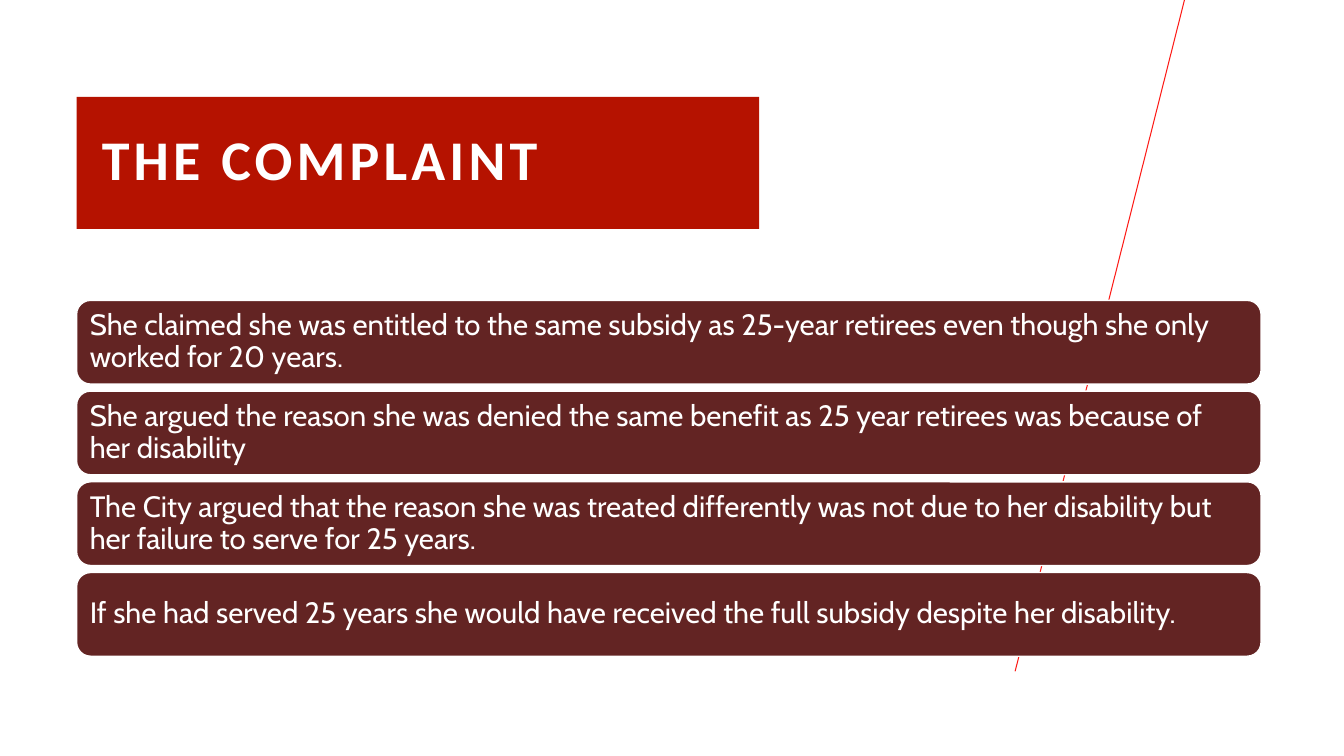
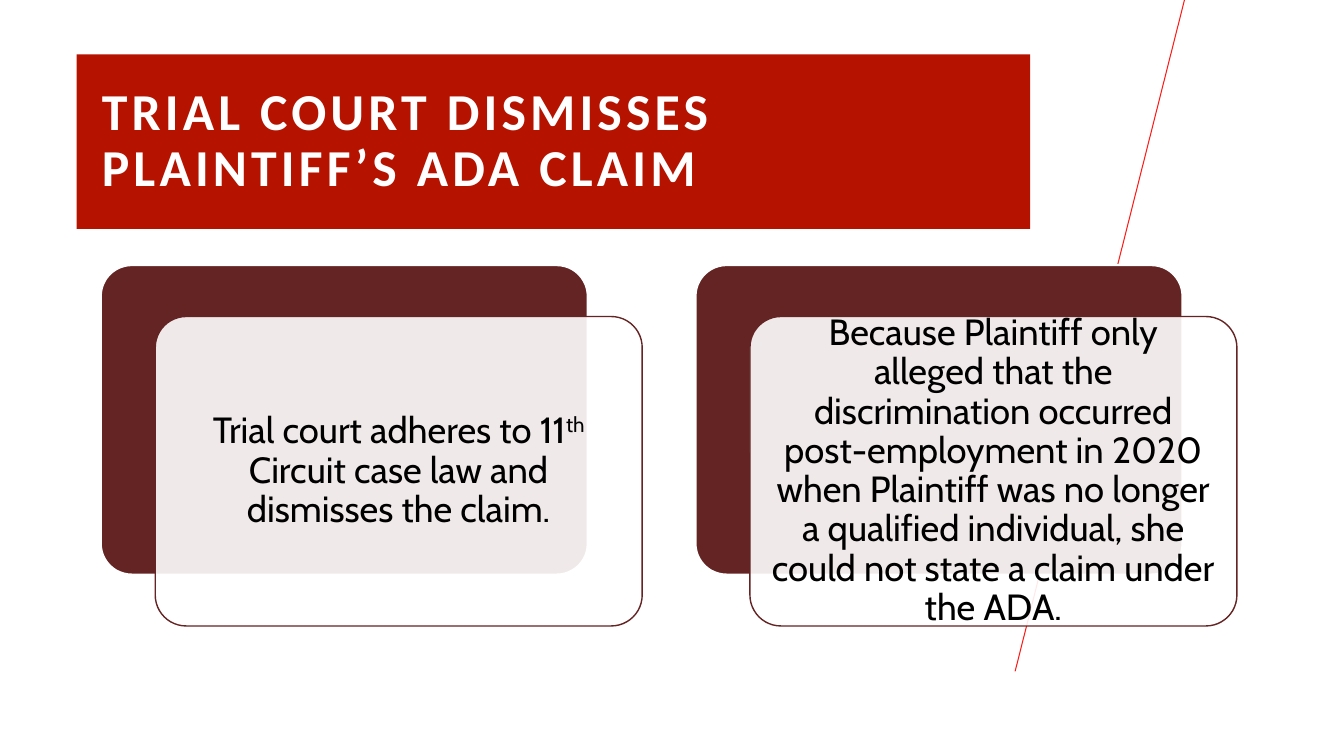
from dataclasses import dataclass

from lxml.etree import SubElement
from pptx import Presentation
from pptx.dml.color import RGBColor
from pptx.enum.shapes import MSO_CONNECTOR as Connector, MSO_SHAPE as Shape
from pptx.enum.text import MSO_ANCHOR as Anchor, MSO_AUTO_SIZE as AutoSize, PP_ALIGN as Align
from pptx.oxml.ns import qn
from pptx.util import Inches, Pt


@dataclass(frozen=True)
class Theme:
    red: str = "B51200"
    maroon: str = "632423"
    accent: str = "FD1B17"
    white: str = "FFFFFF"
    black: str = "000000"
    title_font: str = "Calibri"
    body_font: str = "Cabin"
    bar_size: int = 21
    card_size: int = 26
    line_spacing: float = 0.9


THEME = Theme()
SLIDE_WIDTH, SLIDE_HEIGHT = Inches(13.33), Inches(7.5)
LEFT_MARGIN = 5.7
TITLE_BOTTOM = 30.27

COMPLAINT_POINTS = (
    "She claimed she was entitled to the same subsidy as 25-year retirees even though she only worked for 20 years.",
    "She argued the reason she was denied the same benefit as 25 year retirees was because of her disability",
    "The City argued that the reason she was treated differently was not due to her disability but "
    "her failure to serve for 25 years.",
    "If she had served 25 years she would have received the full subsidy despite her disability.",
)
RULING_POINTS = (
    ("Trial court adheres to 11", "th", " Circuit case law and dismisses the claim."),
    ("Because Plaintiff only alleged that the discrimination occurred post-employment in 2020 when "
     "Plaintiff was no longer a qualified individual, she could not state a claim under the ADA.",),
)


def across(percent):
    """Turn a percentage of the slide width into a length."""
    return round(SLIDE_WIDTH * percent / 100)


def down(percent):
    """Turn a percentage of the slide height into a length."""
    return round(SLIDE_HEIGHT * percent / 100)


def color(value):
    return RGBColor.from_string(value)


def write_text(frame, pieces, *, size, ink, font=THEME.body_font, bold=False,
               tracking=0, align=Align.LEFT, insets=(0.1, 0.05, 0.1, 0.05)):
    """Write one paragraph; every second piece is superscript."""
    frame.word_wrap = True
    frame.auto_size = AutoSize.NONE
    frame.vertical_anchor = Anchor.MIDDLE
    (frame.margin_left, frame.margin_top,
     frame.margin_right, frame.margin_bottom) = map(Inches, insets)
    paragraph = frame.paragraphs[0]
    paragraph.alignment = align
    paragraph.line_spacing = THEME.line_spacing
    for index, piece in enumerate(pieces):
        run = paragraph.add_run()
        run.text = piece
        run.font.size = Pt(size)
        run.font.name = font
        run.font.bold = bold
        run.font.color.rgb = color(ink)
        properties = run.font._element
        if tracking:
            properties.set("spc", str(tracking * 100))
        if index % 2:
            properties.set("baseline", "30000")


def add_panel(slide, left, top, width, height, *, fill, outline, weight=1, opacity=None, corner=None):
    """Add a rounded rectangle placed in percentages of the slide."""
    panel = slide.shapes.add_shape(
        Shape.ROUNDED_RECTANGLE, across(left), down(top), across(width), down(height))
    panel.shadow.inherit = False
    panel.fill.solid()
    panel.fill.fore_color.rgb = color(fill)
    panel.line.color.rgb = color(outline)
    panel.line.width = Pt(weight)
    if corner is not None:
        panel.adjustments[0] = corner
    if opacity is not None:
        fill_color = panel.element.spPr.find(qn("a:solidFill"))[0]
        SubElement(fill_color, qn("a:alpha")).set("val", str(opacity * 1000))
    return panel


def add_slanted_rule(layout, slide):
    """Draw the rule on a slide, then move it to the layout that all slides share."""
    rule = slide.shapes.add_connector(
        Connector.STRAIGHT, across(88.13), 0, across(75.53), down(88.8))
    rule.line.color.rgb = color(THEME.accent)
    rule.line.width = Pt(0.75)
    SubElement(rule.element.spPr, qn("a:effectLst"))
    layout.shapes.element.append(rule.element)


def add_titled_slide(deck, layout, heading, *, top, width, size):
    slide = deck.slides.add_slide(layout)
    title = slide.shapes.title
    title.left, title.top = across(LEFT_MARGIN), down(top)
    title.width, title.height = across(width), down(TITLE_BOTTOM - top)
    title.fill.solid()
    title.fill.fore_color.rgb = color(THEME.red)
    write_text(title.text_frame, (heading,), size=size, ink=THEME.white, font=THEME.title_font,
               bold=True, tracking=3, insets=(0.25, 0.05, 0.4, 0.05))
    return slide


def add_bars(slide, points, *, top=39.73, pitch=12, height=11.07):
    for row, point in enumerate(points):
        bar = add_panel(slide, LEFT_MARGIN, top + row * pitch, 88.13, height,
                        fill=THEME.maroon, outline=THEME.white)
        write_text(bar.text_frame, (point,), size=THEME.bar_size, ink=THEME.white, insets=(0.09,) * 4)


def add_layered_cards(slide, points, *, left=7.5, top=35.07, pitch=44.25, width=36.23, height=40.93):
    """Add a row of dark cards, each with an offset translucent card that holds the text."""
    for column, pieces in enumerate(points):
        x = left + column * pitch
        add_panel(slide, x, top, width, height, fill=THEME.maroon,
                  outline=THEME.white, weight=1.5, corner=0.1)
        front = add_panel(slide, x + 4.05, top + 6.8, width, height, fill=THEME.white,
                          outline=THEME.maroon, opacity=90, corner=0.1)
        write_text(front.text_frame, pieces, size=THEME.card_size, ink=THEME.black,
                   align=Align.CENTER, insets=(0.11,) * 4)


def main():
    deck = Presentation()
    deck.slide_width, deck.slide_height = SLIDE_WIDTH, SLIDE_HEIGHT
    layout = deck.slide_layouts.get_by_name("Title Only")

    complaint = add_titled_slide(deck, layout, "THE COMPLAINT", top=12.8, width=50.78, size=40)
    add_slanted_rule(layout, complaint)
    add_bars(complaint, COMPLAINT_POINTS)

    ruling = add_titled_slide(deck, layout, "TRIAL COURT DISMISSES PLAINTIFF’S ADA CLAIM",
                              top=7.2, width=70.95, size=37)
    add_layered_cards(ruling, RULING_POINTS)

    deck.save("out.pptx")


if __name__ == "__main__":
    main()
